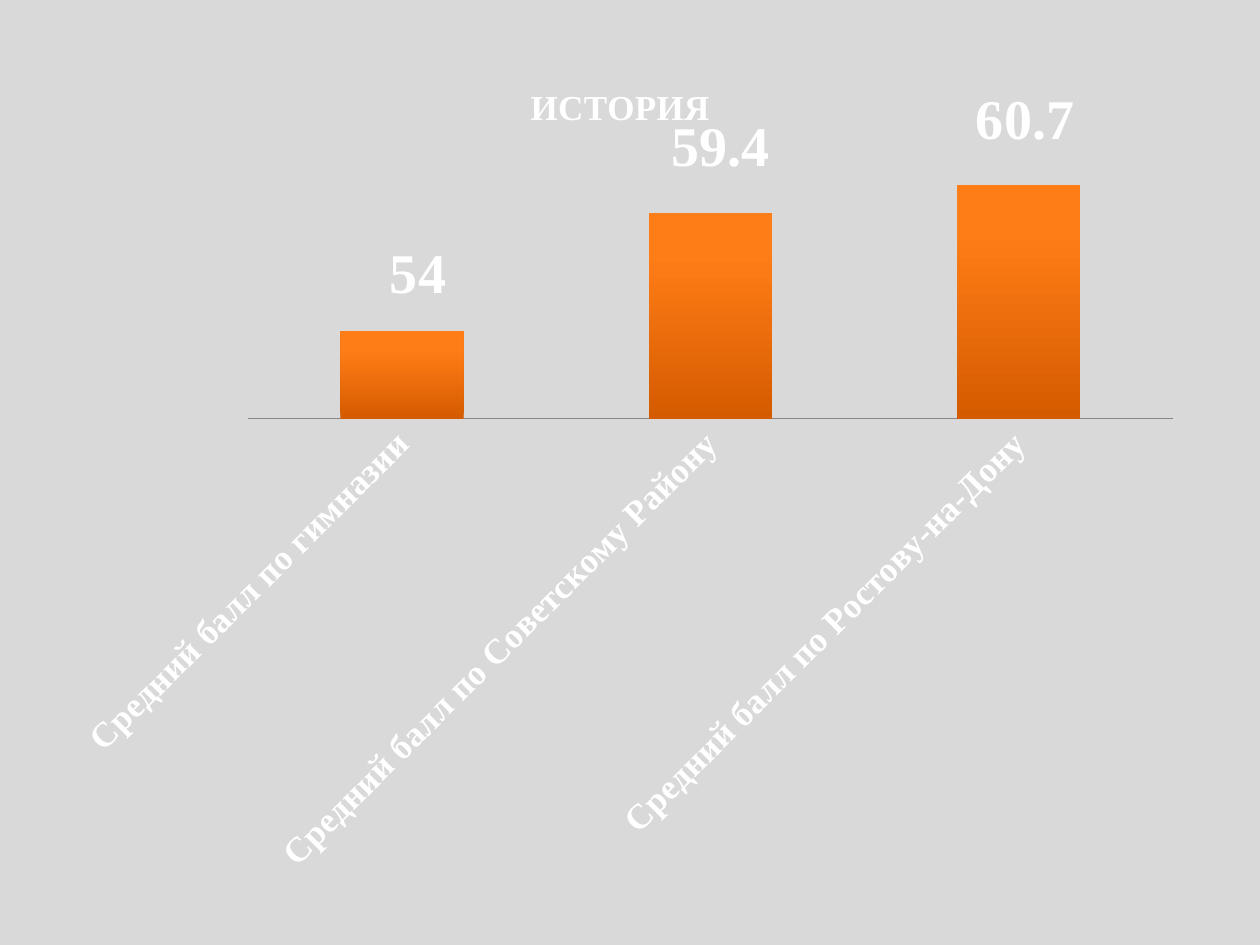
from lxml import etree
from pptx import Presentation
from pptx.chart.data import CategoryChartData
from pptx.dml.color import RGBColor
from pptx.enum.chart import XL_CHART_TYPE as ChartType
from pptx.enum.chart import XL_LABEL_POSITION as LabelPosition
from pptx.enum.chart import XL_TICK_MARK as TickMark
from pptx.oxml.ns import qn
from pptx.util import Cm, Pt

BACKDROP = RGBColor(0xD9, 0xD9, 0xD9)
WHITE = RGBColor(0xFF, 0xFF, 0xFF)
AXIS_GREY = RGBColor(0x87, 0x87, 0x87)
ORANGE = RGBColor(0xFF, 0x7D, 0x17)
DARK_ORANGE = RGBColor(0xD5, 0x5B, 0x00)

SCORES = {
    "Средний балл по гимназии": 54,
    "Средний балл по Советскому Району": 59.4,
    "Средний балл по Ростову-на-Дону": 60.7,
}
# Shift of each value label, as fractions of the chart's size
LABEL_SHIFTS = [(0.014, -0.025), (0.009, -0.036), (0.006, -0.034)]


def set_layout(parent, index, **settings):
    """Give a chart part a manual layout as its child number index."""
    for old in parent.findall(qn("c:layout")):
        parent.remove(old)
    layout = etree.Element(qn("c:layout"))
    manual = etree.SubElement(layout, qn("c:manualLayout"))
    for tag, value in settings.items():
        etree.SubElement(manual, qn(f"c:{tag}")).set("val", str(value))
    parent.insert(index, layout)


class ScoreSlide:
    font_name = "Times New Roman"

    def __init__(self, deck):
        self.slide = deck.slides.add_slide(deck.slide_layouts[6])
        fill = self.slide.background.fill
        fill.solid()
        fill.fore_color.rgb = BACKDROP

    def style(self, font, size):
        font.name = self.font_name
        font.size = Pt(size)
        font.bold = True
        font.color.rgb = WHITE

    def add_column_chart(self, scores):
        data = CategoryChartData()
        data.categories = list(scores)
        data.add_series("Средний балл", list(scores.values()))
        chart = self.slide.shapes.add_chart(
            ChartType.COLUMN_CLUSTERED,
            Cm(1.09), Cm(1.12), Cm(23.01), Cm(16.79), data).chart
        chart.has_legend = False
        chart.font.name = self.font_name
        chart.font.size = Pt(10)
        plot = chart.plots[0]
        plot.gap_width = 150
        plot.vary_by_categories = False
        set_layout(chart.element.xpath("c:chart/c:plotArea")[0], 0,
                   layoutTarget="inner", xMode="edge", yMode="edge",
                   x=0.17, y=0.121, w=0.81, h=0.315)
        return chart

    def add_chart_title(self, chart, text):
        chart.has_title = True
        heading = chart.chart_title.text_frame.paragraphs[0]
        heading.text = text
        self.style(heading.font, 20)
        set_layout(chart.element.xpath("c:chart/c:title")[0], 1,
                   xMode="edge", yMode="edge", x=0.412, y=0.028)

    def format_axes(self, chart):
        scale = chart.value_axis
        scale.minimum_scale, scale.maximum_scale = 50, 62
        scale.has_major_gridlines = False
        scale.visible = False
        names = chart.category_axis
        names.major_tick_mark = TickMark.NONE
        names.format.line.color.rgb = AXIS_GREY
        names.format.line.width = Pt(0.75)
        self.style(names.tick_labels.font, 20)
        slant = chart.element.xpath(".//c:catAx/c:txPr/a:bodyPr")[0]
        slant.set("rot", str(-45 * 60000))
        slant.set("vert", "horz")

    def format_columns(self, chart):
        fill = chart.plots[0].series[0].format.fill
        fill.gradient()
        fill.gradient_angle = 90
        stops = zip(fill.gradient_stops, (0, 0.8), (DARK_ORANGE, ORANGE))
        for stop, position, color in stops:
            stop.position = position
            stop.color.rgb = color

    def add_value_labels(self, chart, shifts):
        points = chart.plots[0].series[0].points
        for index in range(len(shifts)):
            label = points[index].data_label
            self.style(label.font, 32)
            label.position = LabelPosition.OUTSIDE_END
        for element, (x, y) in zip(chart.element.xpath(".//c:dLbl"), shifts):
            set_layout(element, 1, x=x, y=y)
        for leader_lines in chart.element.xpath(".//c:showLeaderLines"):
            leader_lines.set("val", "0")


def main():
    deck = Presentation()
    deck.slide_width, deck.slide_height = Cm(25.4), Cm(19.05)
    history = ScoreSlide(deck)
    chart = history.add_column_chart(SCORES)
    history.add_chart_title(chart, "ИСТОРИЯ")
    history.format_axes(chart)
    history.format_columns(chart)
    history.add_value_labels(chart, LABEL_SHIFTS)
    deck.save("out.pptx")


if __name__ == "__main__":
    main()
